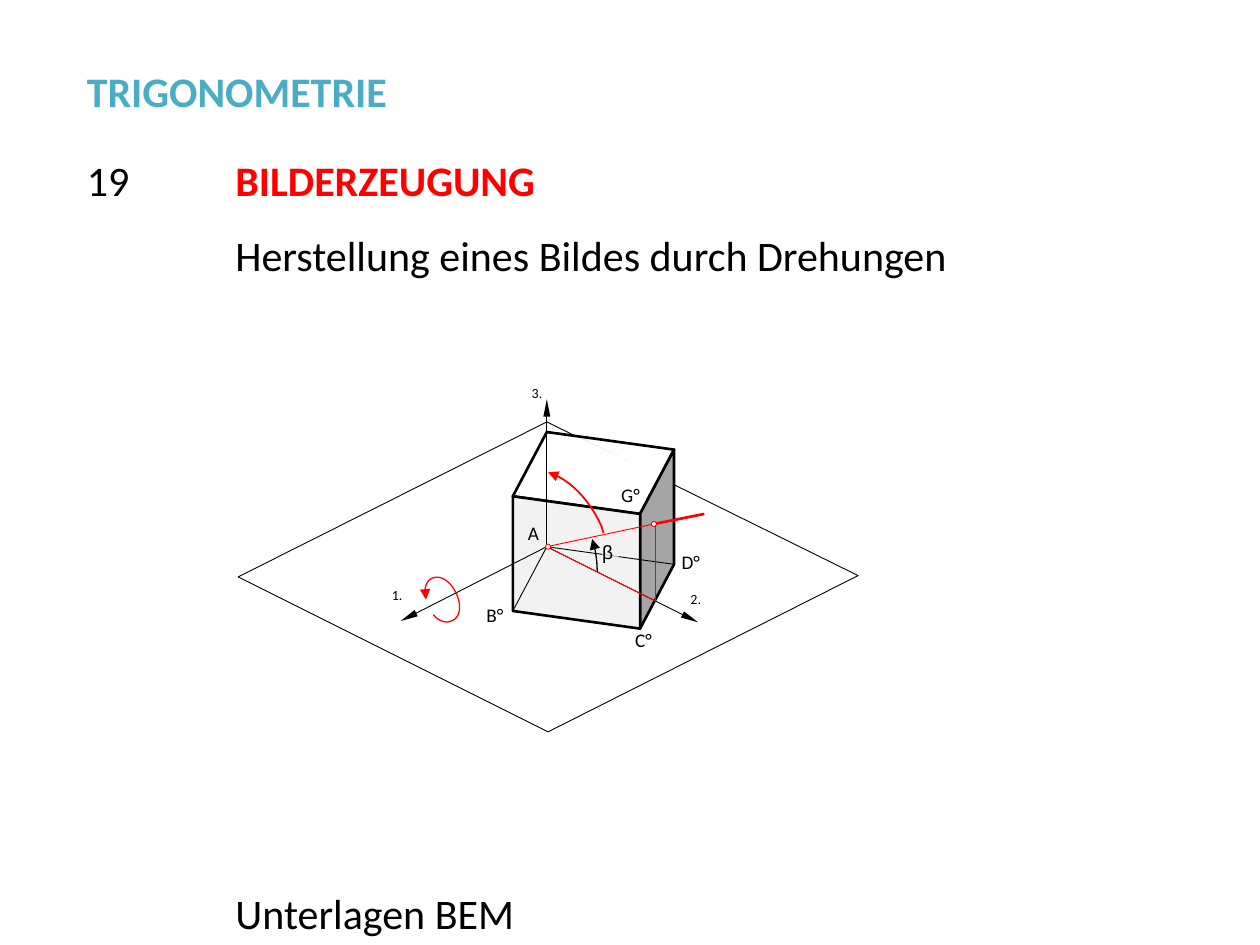
from lxml import etree
from pptx import Presentation, util as u
from pptx.dml.color import RGBColor
from pptx.enum import shapes, text
from pptx.oxml.ns import qn

BLACK, WHITE, RED, TEAL = "000000", "FFFFFF", "FF0000", "4BACC6"
LIGHT, GREY = "F2F2F2", "A5A5A5"
ROW = 0.59  # height of a text row, also the left margin
COLUMN = 1.18  # width of the number column
FIGURE_WIDTH = 4.92  # width in which the figure's lengths are given


def color(code):
    return RGBColor.from_string(code)


def write(frame, *runs, size=24, hex_color=BLACK, bold=False, inset=None, wrap=True):
    """Fill the frame with one paragraph of (words, font) runs."""
    frame.word_wrap = wrap
    frame.vertical_anchor = text.MSO_ANCHOR.TOP
    if inset is not None:
        frame.margin_left = frame.margin_right = inset
        frame.margin_top = frame.margin_bottom = inset
    paragraph = frame.paragraphs[0]
    paragraph.alignment = text.PP_ALIGN.LEFT
    for words, font_name in runs:
        run = paragraph.add_run()
        run.text = words
        font = run.font
        font.name, font.size, font.bold = font_name, u.Pt(size), bold
        font.color.rgb = color(hex_color)


def style(shape, fill=None, line=None, width=0.5):
    shape.shadow.inherit = False
    if fill:
        shape.fill.solid()
        shape.fill.fore_color.rgb = color(fill)
    else:
        shape.fill.background()
    if line:
        shape.line.color.rgb = color(line)
        shape.line.width = u.Pt(width)
    else:
        shape.line.fill.background()


def add_arrowhead(shape, end, width="med", length="med"):
    etree.SubElement(shape.line._get_or_add_ln(), qn("a:" + end),
                     type="triangle", w=width, len=length)


def bezier(points, steps=12):
    """Points along a chain of cubic curves."""
    curve = [points[0]]
    for first in range(0, len(points) - 1, 3):
        controls = points[first:first + 4]
        for step in range(1, steps + 1):
            t = step / steps
            weights = ((1 - t) ** 3, 3 * t * (1 - t) ** 2, 3 * t * t * (1 - t), t ** 3)
            curve.append(tuple(sum(w * p[axis] for w, p in zip(weights, controls))
                               for axis in (0, 1)))
    return curve


class Figure:
    """Drawing whose lengths are counted from corner A of the cube."""

    def __init__(self, slide, left, top, width, height):
        self.shapes = slide.shapes.add_group_shape().shapes
        self.scale = width / FIGURE_WIDTH
        self.origin = left + width / 2 - 0.01 * self.scale, top + 0.467 * height

    def place(self, point):
        return [u.Inches(start + offset * self.scale)
                for start, offset in zip(self.origin, point)]

    def size(self, *lengths):
        return [u.Inches(length * self.scale) for length in lengths]

    def outline(self, points, close=True, **format):
        start, *others = [self.place(point) for point in points]
        builder = self.shapes.build_freeform(*start, scale=1.0)
        builder.add_line_segments(others, close=close)
        shape = builder.convert_to_shape()
        style(shape, **format)
        return shape

    def line(self, start, end, hex_color=BLACK, width=0.5, arrow=False):
        connector = self.shapes.add_connector(
            shapes.MSO_CONNECTOR.STRAIGHT, *self.place(start), *self.place(end))
        connector.line.color.rgb = color(hex_color)
        connector.line.width = u.Pt(width)
        if arrow:
            add_arrowhead(connector, "tailEnd", "sm", "lg")
        etree.SubElement(connector._element.spPr, qn("a:effectLst"))

    def turn(self, points, hex_color, width):
        """Curved arrow whose head sits at the first point."""
        shape = self.outline(bezier(points), close=False, line=hex_color, width=width)
        add_arrowhead(shape, "headEnd")

    def dot(self, center, diameter=0.04):
        corner = [value - diameter / 2 for value in center]
        shape = self.shapes.add_shape(shapes.MSO_SHAPE.OVAL, *self.place(corner),
                                      *self.size(diameter, diameter))
        style(shape, WHITE, RED)

    def label(self, corner, *runs, size=11):
        box = self.shapes.add_textbox(*self.place(corner), *self.size(0.18, 0.27))
        write(box.text_frame, *runs, size=size, inset=0, wrap=False)


def add_cube_figure(slide, left, top, width, height):
    figure = Figure(slide, left, top, width, height)
    a, b, d = (0, 0), (-0.27, 0.51), (1.01, 0.14)
    c = (b[0] + d[0], b[1] + d[1])
    top_a, top_b, top_c, top_d = [(x, y - 0.91) for x, y in (a, b, c, d)]
    g, foot = (0.85, -0.18), (0.86, 0.43)

    figure.outline([(0, -0.99), (2.47, 0.23), (0.01, 1.47), (-2.45, 0.24)], line=BLACK)
    figure.line((0.21, -0.88), (1.01, -0.49), WHITE, 1.5)
    figure.outline([top_d, top_a, top_b, top_c], line=BLACK, width=1.5)
    figure.outline([d, c, top_c, top_d], fill=GREY, line=BLACK, width=1.5)
    figure.outline([b, c, top_c, top_b], fill=LIGHT, line=BLACK, width=1.5)
    figure.outline([d, a, b, c], line=BLACK)

    for tip in ((0, -1.17), (-1.16, 0.59), (1.2, 0.6)):
        figure.line(a, tip, arrow=True)
    figure.line(g, (1.25, -0.26), RED, 1.5)
    figure.line(foot, (foot[0], g[1]), RED)
    figure.line(a, g, RED)
    figure.dot(g)

    figure.turn([(0.36, -0.06), (0.39, 0.03), (0.4, 0.12), (0.4, 0.2)], BLACK, 0.75)
    figure.turn([(0.01, -0.59), (0.18, -0.54), (0.34, -0.37), (0.43, -0.17),
                 (0.44, -0.15), (0.44, -0.13), (0.45, -0.11)], RED, 1)
    figure.turn([(-0.96, 0.42), (-0.98, 0.34), (-0.96, 0.27), (-0.91, 0.25),
                 (-0.84, 0.22), (-0.76, 0.28), (-0.72, 0.37),
                 (-0.67, 0.47), (-0.69, 0.57), (-0.76, 0.59),
                 (-0.8, 0.61), (-0.86, 0.59), (-0.9, 0.54)], RED, 0.75)

    beta = figure.shapes.add_shape(shapes.MSO_SHAPE.RECTANGLE,
                                   *figure.place((0.44, -0.05)), *figure.size(0.13, 0.24))
    style(beta, LIGHT)
    fill_color = beta._element.spPr.find(qn("a:solidFill"))[0]
    etree.SubElement(fill_color, qn("a:alpha"), val="75000")
    write(beta.text_frame, ("β", "Arial"), size=11, inset=0, wrap=False)
    figure.line(a, foot, RED)
    figure.dot((0.01, 0))

    corners = {"A": (-0.15, -0.2), "B°": (-0.48, 0.45), "C°": (0.7, 0.65),
               "D°": (1.07, 0.03), "G°": (0.59, -0.5)}
    for name, corner in corners.items():
        figure.label(corner, (name, "Calibri"))
    for name, corner in {"1.": (-1.23, 0.32), "2.": (1.14, 0.35)}.items():
        figure.label(corner, (name, "Calibri"), size=8)
    figure.label((-0.12, -1.29), ("3", "Calibri"), (".", "Times New Roman"), size=8)


def add_text_row(slide, words, column, row, width, **format):
    box = slide.shapes.add_textbox(
        u.Inches(ROW + column * COLUMN), u.Inches(row * ROW), u.Inches(width), u.Inches(0.5))
    write(box.text_frame, (words, "Calibri"), **format)


def main():
    presentation = Presentation()
    presentation.slide_width, presentation.slide_height = u.Inches(10), u.Inches(7.5)
    slide = presentation.slides.add_slide(presentation.slide_layouts[6])

    add_cube_figure(slide, 1.89, 3.05, FIGURE_WIDTH, 2.76)
    add_text_row(slide, "TRIGONOMETRIE", 0, 0.8, 4.41, hex_color=TEAL, bold=True)
    add_text_row(slide, "19", 0, 2, 1.02)
    add_text_row(slide, "BILDERZEUGUNG", 1, 2, 6.9, hex_color=RED, bold=True)
    add_text_row(slide, "Herstellung eines Bildes durch Drehungen", 1, 3, 6.9)
    add_text_row(slide, "Unterlagen BEM", 1, 11.86, 6.48)
    presentation.save("out.pptx")


if __name__ == "__main__":
    main()
